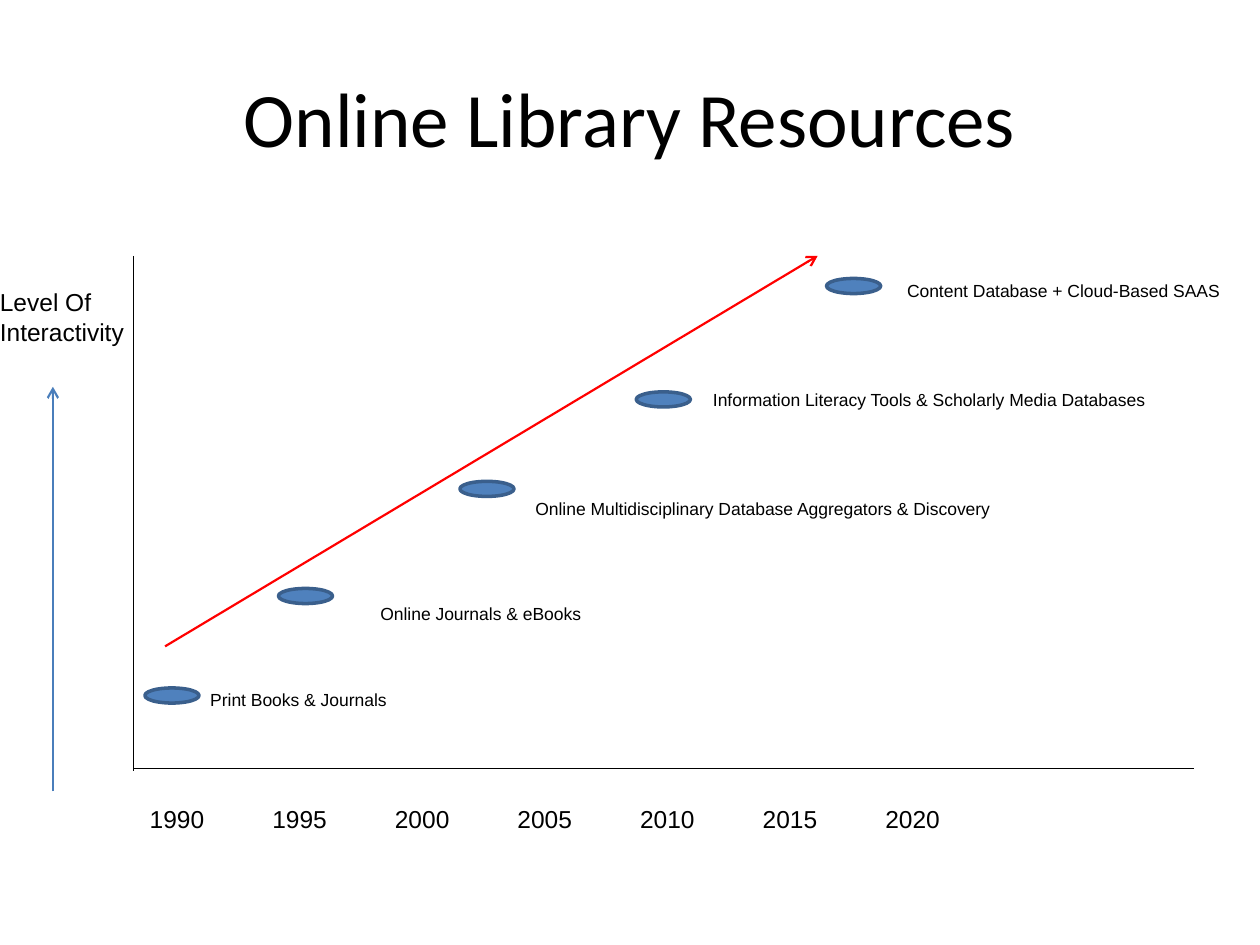
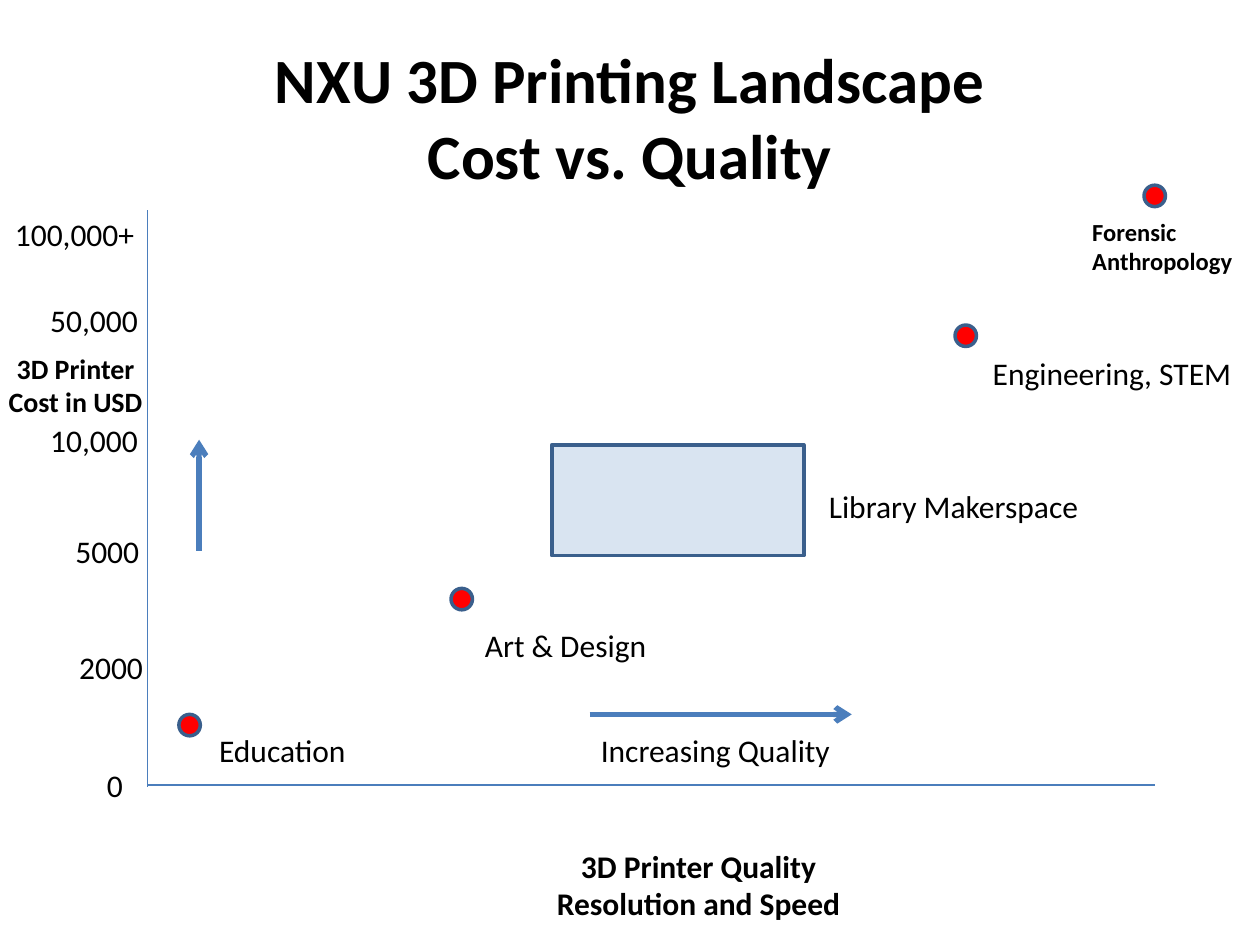
from collections import namedtuple

from lxml import etree
from pptx import Presentation
from pptx.dml.color import RGBColor
from pptx.enum.shapes import MSO_CONNECTOR, MSO_SHAPE
from pptx.enum.text import MSO_ANCHOR, MSO_AUTO_SIZE, PP_ALIGN
from pptx.oxml.ns import qn
from pptx.util import Inches, Pt

STRAIGHT = MSO_CONNECTOR.STRAIGHT
OVAL = MSO_SHAPE.OVAL
RECTANGLE = MSO_SHAPE.RECTANGLE
MIDDLE = MSO_ANCHOR.MIDDLE
FIT_TEXT = MSO_AUTO_SIZE.SHAPE_TO_FIT_TEXT
LEFT = PP_ALIGN.LEFT
CENTER = PP_ALIGN.CENTER

BLACK = "000000"
RED = "FF0000"
BLUE = "4F81BD"
AXIS_BLUE = "4B7EBC"
OUTLINE = "3A5F8C"

Box = namedtuple("Box", "left top width height")
TITLE_BOX = Box(0.5, 0.3, 9, 1.25)
TIMELINE_BOX = Box(1.06, 2.03, 8.42, 4.07)
LANDSCAPE_BOX = Box(1.17, 1.67, 8, 4.56)


def color(hex_value):
    return RGBColor.from_string(hex_value)


def within(box, left, top, width, height):
    return Box(box.left + left, box.top + top, width, height)


def lengths(box):
    return [Inches(value) for value in box]


def add_text(page, box, text, size, font="Calibri", bold=False,
             align=LEFT, wrap=False):
    text_box = page.shapes.add_textbox(*lengths(box))
    frame = text_box.text_frame
    frame.text = text
    frame.word_wrap = wrap
    frame.auto_size = FIT_TEXT
    for para in frame.paragraphs:
        para.alignment = align
        for span in para.runs:
            span.font.name = font
            span.font.size = Pt(size)
            span.font.bold = bold
            span.font.color.rgb = color(BLACK)
    return text_box


def add_title(page, text, size, bold=False):
    title = add_text(page, TITLE_BOX, text, size, bold=bold, align=CENTER, wrap=True)
    title.text_frame.auto_size = MSO_AUTO_SIZE.NONE
    title.text_frame.vertical_anchor = MIDDLE


def add_figure(page, kind, box, fill, opacity=100):
    figure = page.shapes.add_shape(kind, *lengths(box))
    figure.shadow.inherit = False
    figure.fill.solid()
    figure.fill.fore_color.rgb = color(fill)
    figure.line.color.rgb = color(OUTLINE)
    figure.line.width = Pt(2)
    if opacity < 100:
        tint = figure.fill._xPr.find(".//" + qn("a:srgbClr"))
        etree.SubElement(tint, qn("a:alpha"), val=str(opacity * 1000))


def add_line(page, box, start, end, hex_value, weight, arrow=False):
    points = [Inches(value) for x, y in (start, end)
              for value in (box.left + x, box.top + y)]
    line = page.shapes.add_connector(STRAIGHT, *points)
    line.line.color.rgb = color(hex_value)
    line.line.width = Pt(weight)
    if arrow:
        etree.SubElement(line.line._get_or_add_ln(), qn("a:tailEnd"), type="arrow")
    etree.SubElement(line._element.spPr, qn("a:effectLst"))


def add_axes(page, box, hex_value):
    add_line(page, box, (0, 0), (0, box.height + 0.02), hex_value, 0.75)
    add_line(page, box, (0, box.height), (box.width, box.height), hex_value, 0.75)


def build_timeline(page, box):
    add_axes(page, box, BLACK)
    add_line(page, box, (-0.64, 4.25), (-0.64, 1.04), "4A7EBB", 1.25, arrow=True)
    add_text(page, within(box, -1.16, 0.2, 1.19, 0.57),
             "Level Of\nInteractivity", 14, "Arial")
    for index, year in enumerate(range(1990, 2021, 5)):
        add_text(page, within(box, 0.03 + 0.973 * index, 4.3, 0.64, 0.34),
                 str(year), 14, "Arial")
    resources = [
        ("Print Books & Journals", 0.09, 3.43, 0.51, 3.39, 1.61),
        ("Online Journals & eBooks", 1.15, 2.64, 1.86, 2.71, 1.81),
        ("Online Multidisciplinary Database Aggregators & Discovery",
         2.59, 1.79, 3.09, 1.87, 3.85),
        ("Information Literacy Tools & Scholarly Media Databases",
         3.99, 1.08, 4.5, 1.01, 3.68),
        ("Content Database + Cloud-Based SAAS", 5.5, 0.18, 6.04, 0.14, 2.69),
    ]
    for label, marker_x, marker_y, label_x, label_y, width in resources:
        add_figure(page, OVAL, within(box, marker_x, marker_y, 0.43, 0.12), BLUE)
        add_text(page, within(box, label_x, label_y, width, 0.27), label, 10, "Arial")
    add_line(page, box, (0.25, 3.1), (5.43, 0), RED, 1.25, arrow=True)


def build_cost_axis(page, box):
    costs = [
        ("100,000+", -1.15, -0.01),
        ("50,000", -0.87, 0.67),
        ("10,000", -0.87, 1.62),
        ("5000", -0.67, 2.5),
        ("2000", -0.64, 3.42),
        ("0", -0.42, 4.36),
    ]
    for cost, left, top in costs:
        add_text(page, within(box, left, top, 1.16, 0.4), cost, 18, wrap=True)
    add_text(page, within(box, -1.21, 1.07, 1.28, 0.64),
             "3D Printer\vCost in USD", 16, bold=True, align=CENTER)
    add_line(page, box, (0.41, 2.7), (0.41, 1.82), AXIS_BLUE, 3, arrow=True)


def build_quality_axis(page, box):
    add_text(page, within(box, 3.14, 5, 2.47, 0.71),
             "3D Printer Quality\vResolution and Speed", 18, bold=True, align=CENTER)
    add_line(page, box, (3.51, 4), (5.59, 4), AXIS_BLUE, 3, arrow=True)
    add_text(page, within(box, 3.5, 4.08, 2.04, 0.4), "Increasing Quality", 18)


def build_landscape(page, box):
    add_figure(page, RECTANGLE, within(box, 3.21, 1.86, 2, 0.88), BLUE, opacity=21)
    add_text(page, within(box, 5.31, 2.15, 2.2, 0.4), "Library Makerspace", 18)
    add_axes(page, box, AXIS_BLUE)
    build_cost_axis(page, box)
    build_quality_axis(page, box)
    for left, top in [(0.25, 4), (2.41, 3), (7.91, -0.2), (6.41, 0.91)]:
        add_figure(page, OVAL, within(box, left, top, 0.17, 0.17), RED)
    users = [
        ("Education", 0.47, 4.08, 1.22),
        ("Art & Design", 2.58, 3.25, 1.5),
        ("Engineering, STEM", 6.61, 1.09, 2.12),
    ]
    for user, left, top, width in users:
        add_text(page, within(box, left, top, width, 0.4), user, 18)
    add_text(page, within(box, 7.4, 0, 1.32, 0.57),
             "Forensic\vAnthropology", 14, bold=True)


def main():
    deck = Presentation()
    deck.slide_width = Inches(10)
    deck.slide_height = Inches(7.5)
    blank = deck.slide_layouts[6]

    page = deck.slides.add_slide(blank)
    add_title(page, "Online Library Resources", 44)
    build_timeline(page, TIMELINE_BOX)

    page = deck.slides.add_slide(blank)
    add_title(page, "NXU 3D Printing Landscape\vCost vs. Quality", 36, bold=True)
    build_landscape(page, LANDSCAPE_BOX)

    deck.save("out.pptx")


if __name__ == "__main__":
    main()
